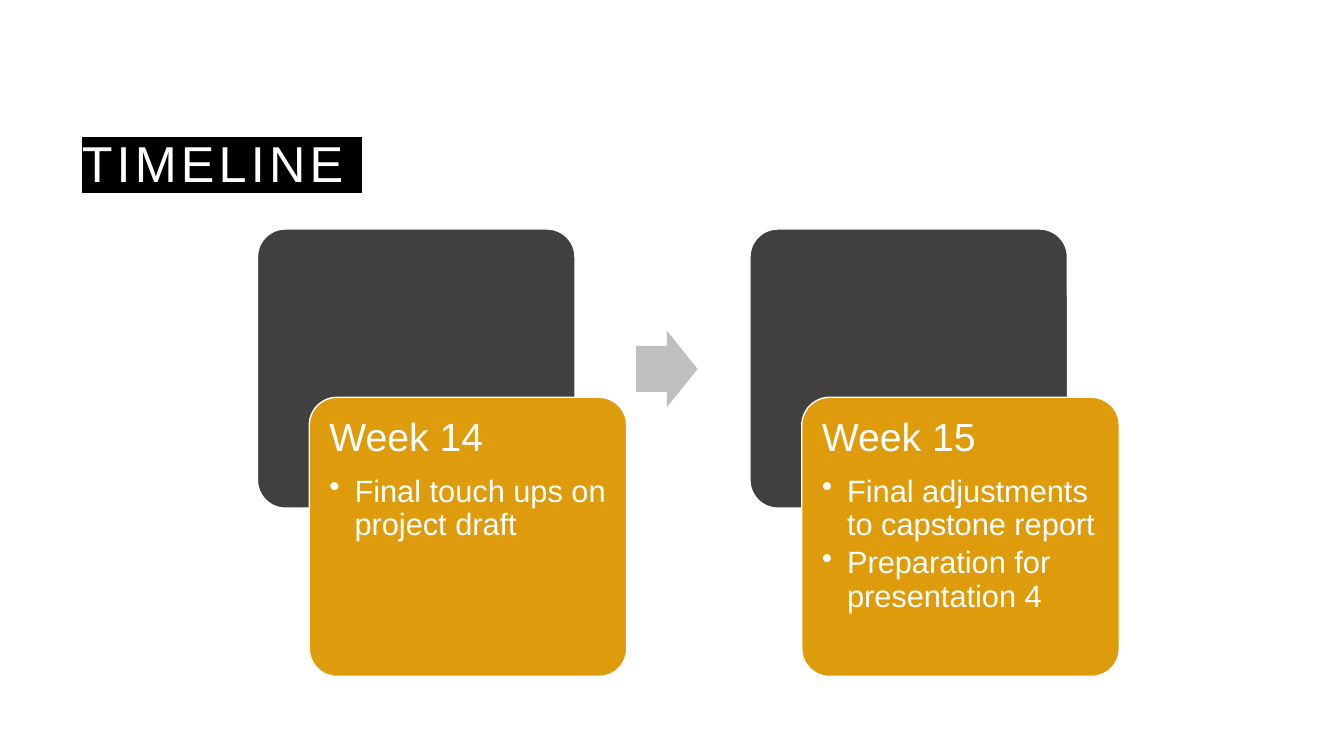
import pptx
import pptx.dml.color
import pptx.enum.shapes
import pptx.enum.text
import pptx.oxml
import pptx.oxml.ns
import pptx.util
from lxml import etree

Pt = pptx.util.Pt
qn = pptx.oxml.ns.qn
SHAPES = pptx.enum.shapes.MSO_SHAPE
ANCHOR = pptx.enum.text.MSO_ANCHOR
ALIGN = pptx.enum.text.PP_ALIGN


def colour(hex_text):
    return pptx.dml.color.RGBColor.from_string(hex_text)


class TimelineSlide:
    font = "Arial"
    white, black = "FFFFFF", "000000"
    dark, amber, grey = "404040", "DE9C0C", "BFBFBF"

    def __init__(self, deck):
        self.page = deck.slides.add_slide(deck.slide_layouts[5])

    def span(self, para, text, size):
        span = para.add_run()
        span.text = text
        span.font.name = self.font
        span.font.size = Pt(size)
        span.font.bold = False
        span.font.color.rgb = colour(self.white)
        return span

    def title(self, text, left, top, width, height):
        box = self.page.shapes.title
        box.left, box.top, box.width, box.height = map(Pt, (left, top, width, height))
        frame = box.text_frame
        frame.word_wrap = True
        frame.auto_size = pptx.enum.text.MSO_AUTO_SIZE.NONE
        frame.vertical_anchor = ANCHOR.BOTTOM
        para = frame.paragraphs[0]
        para.alignment = ALIGN.LEFT
        para.line_spacing = 1.2
        para.space_before = Pt(0)
        span = self.span(para, text, 36)
        # Letter spacing and highlight
        properties = span.font._element
        properties.set("spc", "300")
        highlight = etree.Element(qn("a:highlight"))
        etree.SubElement(highlight, qn("a:srgbClr"), val=self.black)
        properties.find(qn("a:solidFill")).addnext(highlight)

    def shape(self, kind, left, top, width, height, fill, adjustments, line=None):
        shape = self.page.shapes.add_shape(kind, *map(Pt, (left, top, width, height)))
        shape.shadow.inherit = False
        for index, value in enumerate(adjustments):
            shape.adjustments[index] = value
        shape.fill.solid()
        shape.fill.fore_color.rgb = colour(fill)
        if line:
            shape.line.color.rgb = colour(line)
            shape.line.width = Pt(1)
        else:
            shape.line.fill.background()
        return shape

    def card(self, left, top, fill):
        return self.shape(SHAPES.ROUNDED_RECTANGLE, left, top, CARD_WIDTH, CARD_HEIGHT,
                          fill, [0.1], self.white)

    def paragraph(self, para, text, size, space_after, bullet=False):
        para.alignment = ALIGN.LEFT
        para.line_spacing = 0.9
        para.space_before = Pt(0)
        para.space_after = Pt(space_after)
        if bullet:
            para.level = 1
            properties = para._p.get_or_add_pPr()
            properties.set("marL", str(Pt(18)))
            properties.set("indent", str(-Pt(18)))
            etree.SubElement(properties, qn("a:buChar"), char="•")
        self.span(para, text, size)

    def week(self, left, top, heading, tasks):
        self.card(left, top, self.dark)
        frame = self.card(left + 37, top + 120.2, self.amber).text_frame
        frame.word_wrap = True
        frame.vertical_anchor = ANCHOR.TOP
        frame.margin_left = frame.margin_right = Pt(8.5)
        frame.margin_top = frame.margin_bottom = Pt(8.5)
        self.paragraph(frame.paragraphs[0], heading, 28, 11.3)
        for task in tasks:
            self.paragraph(frame.add_paragraph(), task, 22, 3.8, bullet=True)


CARD_WIDTH, CARD_HEIGHT = 226.8, 199.4
FIRST_LEFT, WEEK_TOP, WEEK_PITCH = 183.9, 163.6, 351.8
WEEKS = [
    ("Week 14", ["Final touch ups on project draft"]),
    ("Week 15", ["Final adjustments to capstone report", "Preparation for presentation 4"]),
]


def main():
    deck = pptx.Presentation()
    deck.slide_width, deck.slide_height = Pt(960), Pt(540)
    slide = TimelineSlide(deck)

    # Title
    slide.title("TIMELINE ", 51.2, 51.2, 836.6, 90)

    # Weeks, left to right
    for index, (heading, tasks) in enumerate(WEEKS):
        slide.week(FIRST_LEFT + index * WEEK_PITCH, WEEK_TOP, heading, tasks)

    # Arrow between the weeks
    slide.shape(SHAPES.RIGHT_ARROW, 454.4, 236.2, 43.9, 54.7, slide.grey, [0.6, 0.5])

    deck.save("out.pptx")


if __name__ == "__main__":
    main()
